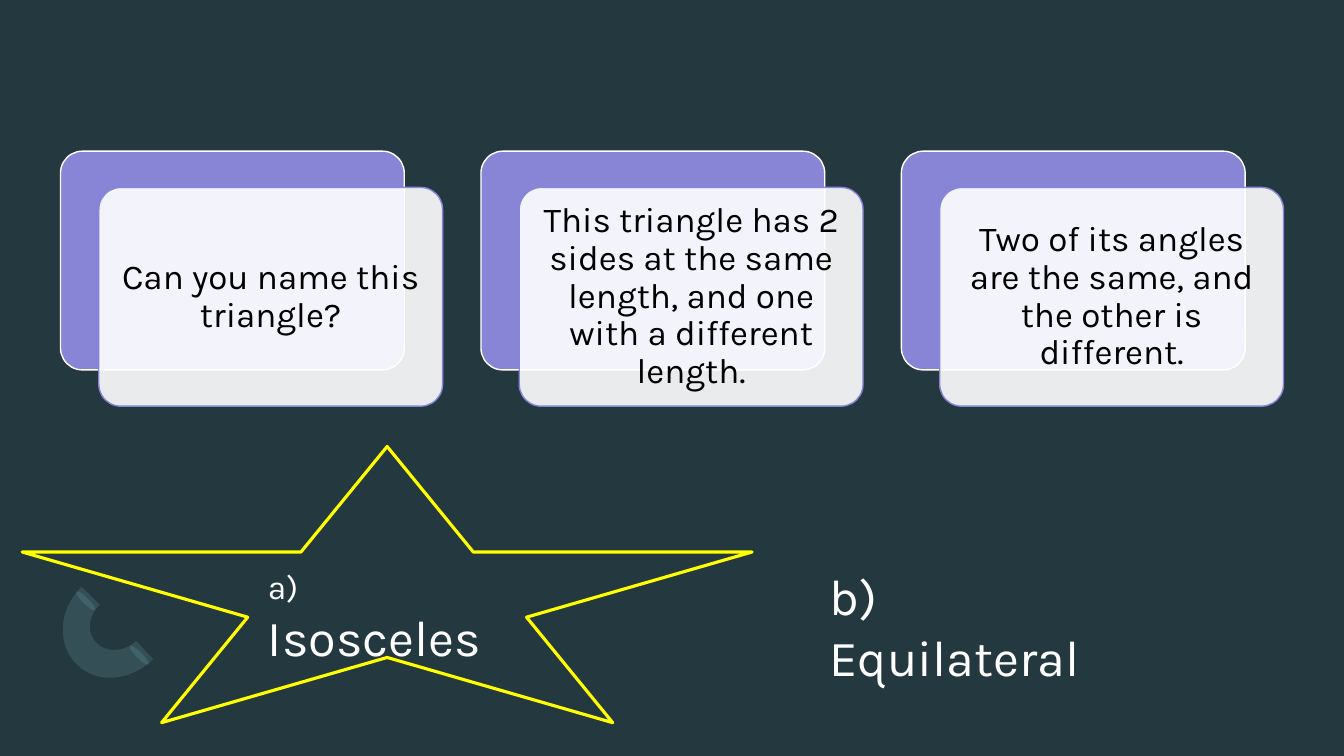
from pptx import Presentation
from pptx.dml.color import RGBColor
from pptx.enum.shapes import MSO_SHAPE
from pptx.enum.text import MSO_ANCHOR, PP_ALIGN
from pptx.oxml.ns import qn
from pptx.util import Inches, Pt
from lxml.etree import SubElement

FONT = "Karla"
CLUES = [
    "Can you name this triangle?",
    "This triangle has 2 sides at the same length, and one with a different length.",
    "Two of its angles are the same, and the other is different.",
]
RING_CURVES = [
    [(0.76, 6.59), (0.56, 6.39), (0.58, 6.05), (0.81, 5.82)],
    [(0.99, 6.0), (0.87, 6.11), (0.86, 6.29), (0.96, 6.38)],
    [(0.96, 6.38), (1.06, 6.48), (1.23, 6.47), (1.35, 6.36)],
    [(1.52, 6.54), (1.3, 6.76), (0.95, 6.79), (0.76, 6.59)],
]


def color(value):
    """Turn a hex string into a colour."""
    return RGBColor.from_string(value)


def paint(shape, fill=None, opacity=100, line=None, line_width=1):
    """Set the fill, opacity and outline of a shape."""
    shape.shadow.inherit = False
    if fill:
        shape.fill.solid()
        shape.fill.fore_color.rgb = color(fill)
        if opacity < 100:
            tone = shape.element.spPr.find(qn("a:solidFill"))[0]
            SubElement(tone, qn("a:alpha"), val=str(opacity * 1000))
    else:
        shape.fill.background()
    if line:
        shape.line.color.rgb = color(line)
        shape.line.width = Pt(line_width)
    else:
        shape.line.fill.background()


def add_preset(page, kind, left, top, width, height, **style):
    """Add a painted preset shape."""
    shape = page.shapes.add_shape(
        kind, Inches(left), Inches(top), Inches(width), Inches(height))
    paint(shape, **style)
    return shape


def curve_points(curve, steps=12):
    """Sample a cubic curve."""
    for step in range(steps + 1):
        t = step / steps
        weights = ((1 - t) ** 3, 3 * t * (1 - t) ** 2, 3 * t * t * (1 - t), t ** 3)
        yield tuple(sum(w * point[axis] for w, point in zip(weights, curve))
                    for axis in (0, 1))


def add_ring(page):
    """Add the faint open ring with its two end caps."""
    for left, top in ((1.35, 6.37), (0.82, 5.83)):
        cap = add_preset(page, MSO_SHAPE.OVAL, left, top, 0.06, 0.26, fill="335159")
        cap.rotation = 135
    points = [(Inches(x), Inches(y)) for curve in RING_CURVES
              for x, y in curve_points(curve)]
    builder = page.shapes.build_freeform(*points[0])
    builder.add_line_segments(points[1:], close=True)
    paint(builder.convert_to_shape(), fill="7CA8B4", opacity=20)


def add_card(page, left, text):
    """Add a clue card in front of its offset backing."""
    for offset, style in ((0, dict(fill="8885D7", line="FFFFFF")),
                          (1, dict(fill="FFFFFF", opacity=90, line="8885D7"))):
        card = add_preset(page, MSO_SHAPE.ROUNDED_RECTANGLE, left + 0.38 * offset,
                          1.5 + 0.36 * offset, 3.41, 2.17, **style)
        card.adjustments[0] = 0.1
    frame = card.text_frame
    frame.word_wrap = True
    frame.vertical_anchor = MSO_ANCHOR.MIDDLE
    frame.margin_left = frame.margin_right = Inches(0.11)
    frame.margin_top = frame.margin_bottom = Inches(0.11)
    para = frame.paragraphs[0]
    para.text = text
    para.alignment = PP_ALIGN.CENTER
    para.line_spacing = 0.9
    para.space_after = Pt(11)
    para.font.name, para.font.size = FONT, Pt(25)
    para.font.color.rgb = color("000000")


def add_answer(page, left, width, spans):
    """Add an answer made of (text, size) spans."""
    box = page.shapes.add_textbox(Inches(left), Inches(5.56), Inches(width), Inches(0.71))
    box.text_frame.word_wrap = True
    para = box.text_frame.paragraphs[0]
    para.font.name = FONT
    para.font.color.rgb = color("FFFFFF")
    for text, size in spans:
        span = para.add_run()
        span.text = text
        span.font.size = Pt(size)


def main():
    """Build the triangle quiz slide."""
    deck = Presentation()
    deck.slide_width, deck.slide_height = Inches(13.33), Inches(7.5)
    page = deck.slides.add_slide(deck.slide_layouts[6])
    page.background.fill.solid()
    page.background.fill.fore_color.rgb = color("24393F")
    add_ring(page)
    for index, clue in enumerate(CLUES):
        add_card(page, 0.6 + 4.17 * index, clue)
    add_answer(page, 2.56, 2.64, [("a) ", 24), ("Isosceles", 36)])
    add_answer(page, 8.13, 3.23, [("b) Equilateral", 36)])
    add_preset(page, MSO_SHAPE.STAR_5_POINT, 0.22, 4.43, 7.24, 2.74,
               line="FFFF00", line_width=2.25)
    deck.save("out.pptx")


if __name__ == "__main__":
    main()
